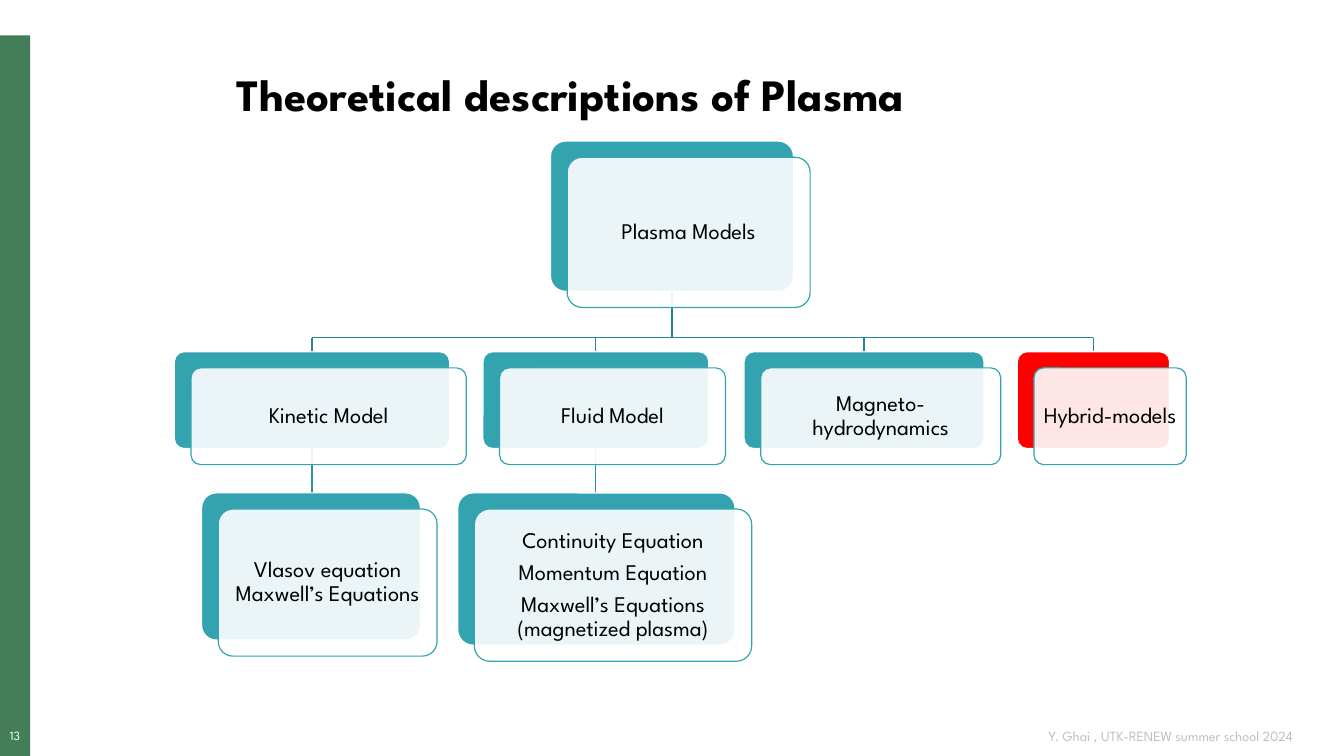
from dataclasses import dataclass

from lxml import etree
from pptx import Presentation
from pptx.dml.color import RGBColor
from pptx.enum import shapes, text
from pptx.oxml.ns import qn
from pptx.util import Inches, Pt


@dataclass(frozen=True)
class Theme:
    font: str = "League Spartan"
    ink: str = "000000"
    paper: str = "FFFFFF"
    footer_grey: str = "BFBFBF"
    bar_green: str = "447E59"
    teal: str = "33A3AF"
    highlight: str = "FF0000"
    branch: str = "29838C"
    leaf_branch: str = "2E949F"
    title_size: float = 32
    card_size: float = 16
    footer_size: float = 10
    number_size: float = 9
    line_width: float = 0.85


THEME = Theme()


@dataclass(frozen=True)
class Box:
    left: float
    top: float
    width: float
    height: float

    @property
    def center(self):
        return self.left + self.width / 2

    @property
    def bottom(self):
        return self.top + self.height

    def shifted(self, dx, dy):
        return Box(self.left + dx, self.top + dy, self.width, self.height)

    def lengths(self):
        return [Inches(v) for v in (self.left, self.top, self.width, self.height)]


@dataclass(frozen=True)
class Model:
    label: str
    box: Box
    children: tuple = ()
    color: str = THEME.teal


LEVEL_TOPS = (1.4, 3.49, 4.89)
MODEL_HEIGHT = 0.96
CARD_SHIFT = (0.165, 0.16)
BUS_GAP = 0.14

KINETIC_EQUATIONS = Model(
    "Vlasov equation Maxwell’s Equations", Box(2, LEVEL_TOPS[2], 2.17, 1.46))
FLUID_EQUATIONS = Model(
    "Continuity Equation\nMomentum Equation\nMaxwell’s Equations (magnetized plasma)",
    Box(4.54, LEVEL_TOPS[2], 2.75, 1.51))
PLASMA_MODELS = Model("Plasma Models", Box(5.46, LEVEL_TOPS[0], 2.41, 1.49), (
    Model("Kinetic Model", Box(1.73, LEVEL_TOPS[1], 2.73, MODEL_HEIGHT),
          (KINETIC_EQUATIONS,)),
    Model("Fluid Model", Box(4.79, LEVEL_TOPS[1], 2.24, MODEL_HEIGHT),
          (FLUID_EQUATIONS,)),
    Model("Magneto-hydrodynamics", Box(7.38, LEVEL_TOPS[1], 2.38, MODEL_HEIGHT)),
    Model("Hybrid-models", Box(10.09, LEVEL_TOPS[1], 1.51, MODEL_HEIGHT),
          color=THEME.highlight),
))


def rgb(color):
    return RGBColor.from_string(color)


def write(frame, content, size, color, align, anchor, margins, spacing=None,
          after=None, bold=False):
    frame.text = content
    frame.word_wrap = True
    frame.auto_size = text.MSO_AUTO_SIZE.NONE
    frame.vertical_anchor = anchor
    (frame.margin_left, frame.margin_top,
     frame.margin_right, frame.margin_bottom) = [Inches(m) for m in margins]
    for paragraph in frame.paragraphs:
        paragraph.alignment = align
        paragraph.line_spacing = spacing
        if after is not None:
            paragraph.space_after = Pt(after)
        for run in paragraph.runs:
            run.font.name = THEME.font
            run.font.size = Pt(size)
            run.font.bold = bold
            run.font.color.rgb = rgb(color)


def add_panel(slide, kind, box, fill, line=None):
    panel = slide.shapes.add_shape(kind, *box.lengths())
    panel.shadow.inherit = False
    panel.fill.solid()
    panel.fill.fore_color.rgb = rgb(fill)
    if line:
        panel.line.color.rgb = rgb(line)
        panel.line.width = Pt(THEME.line_width)
        panel.adjustments[0] = 0.1
    else:
        panel.line.fill.background()
    return panel


def add_line(slide, x1, y1, x2, y2, color):
    line = slide.shapes.add_connector(
        shapes.MSO_CONNECTOR.STRAIGHT, *[Inches(v) for v in (x1, y1, x2, y2)])
    line.line.color.rgb = rgb(color)
    line.line.width = Pt(THEME.line_width)
    etree.SubElement(line._element.spPr, qn("a:effectLst"))


def add_title(slide, box):
    title = slide.shapes.title
    title.left, title.top, title.width, title.height = box.lengths()
    write(title.text_frame, "Theoretical descriptions of Plasma", THEME.title_size,
          THEME.ink, text.PP_ALIGN.LEFT, text.MSO_ANCHOR.TOP,
          (0.1, 0.05, 0.1, 0.05), spacing=0.9, bold=True)


def add_side_bar(slide, box):
    add_panel(slide, shapes.MSO_SHAPE.RECTANGLE, box, THEME.bar_green)
    number_box = Box(box.left, box.bottom - 0.26, box.width, 0.17)
    number = slide.shapes.add_textbox(*number_box.lengths())
    write(number.text_frame, "13", THEME.number_size, THEME.paper,
          text.PP_ALIGN.CENTER, text.MSO_ANCHOR.TOP, (0, 0, 0, 0), spacing=0.9)


def add_footer(slide, box):
    footer = slide.shapes.add_textbox(*box.lengths())
    write(footer.text_frame, "Y. Ghai , UTK-RENEW summer school 2024",
          THEME.footer_size, THEME.footer_grey, text.PP_ALIGN.RIGHT,
          text.MSO_ANCHOR.MIDDLE, (0.1, 0, 0.16, 0))


def add_branches(slide, model):
    parent, children = model.box, [child.box for child in model.children]
    if len(children) == 1:
        add_line(slide, parent.center, parent.bottom, parent.center,
                 children[0].top, THEME.leaf_branch)
    elif children:
        bus = children[0].top - BUS_GAP
        add_line(slide, parent.center, parent.bottom, parent.center, bus, THEME.branch)
        add_line(slide, children[0].center, bus, children[-1].center, bus, THEME.branch)
        for child in children:
            add_line(slide, child.center, bus, child.center, child.top, THEME.branch)
    for child in model.children:
        add_branches(slide, child)


def add_cards(slide, model):
    rounded = shapes.MSO_SHAPE.ROUNDED_RECTANGLE
    add_panel(slide, rounded, model.box, model.color, THEME.paper)
    card = add_panel(slide, rounded, model.box.shifted(*CARD_SHIFT),
                     THEME.paper, THEME.teal)
    paper = card._element.spPr.find(qn("a:solidFill")).find(qn("a:srgbClr"))
    etree.SubElement(paper, qn("a:alpha"), val="90000")
    write(card.text_frame, model.label, THEME.card_size, THEME.ink,
          text.PP_ALIGN.CENTER, text.MSO_ANCHOR.MIDDLE, (0.06,) * 4,
          spacing=0.9, after=5.6)
    for child in model.children:
        add_cards(slide, child)


def main():
    deck = Presentation()
    deck.slide_width, deck.slide_height = Inches(13.33), Inches(7.5)
    slide = deck.slides.add_slide(deck.slide_layouts.get_by_name("Title Only"))
    add_side_bar(slide, Box(0, 0.35, 0.3, 7.15))
    add_footer(slide, Box(8.76, 7.2, 4.22, 0.2))
    add_title(slide, Box(2.25, 0.67, 9, 0.83))
    add_branches(slide, PLASMA_MODELS)
    add_cards(slide, PLASMA_MODELS)
    deck.save("out.pptx")


if __name__ == "__main__":
    main()
